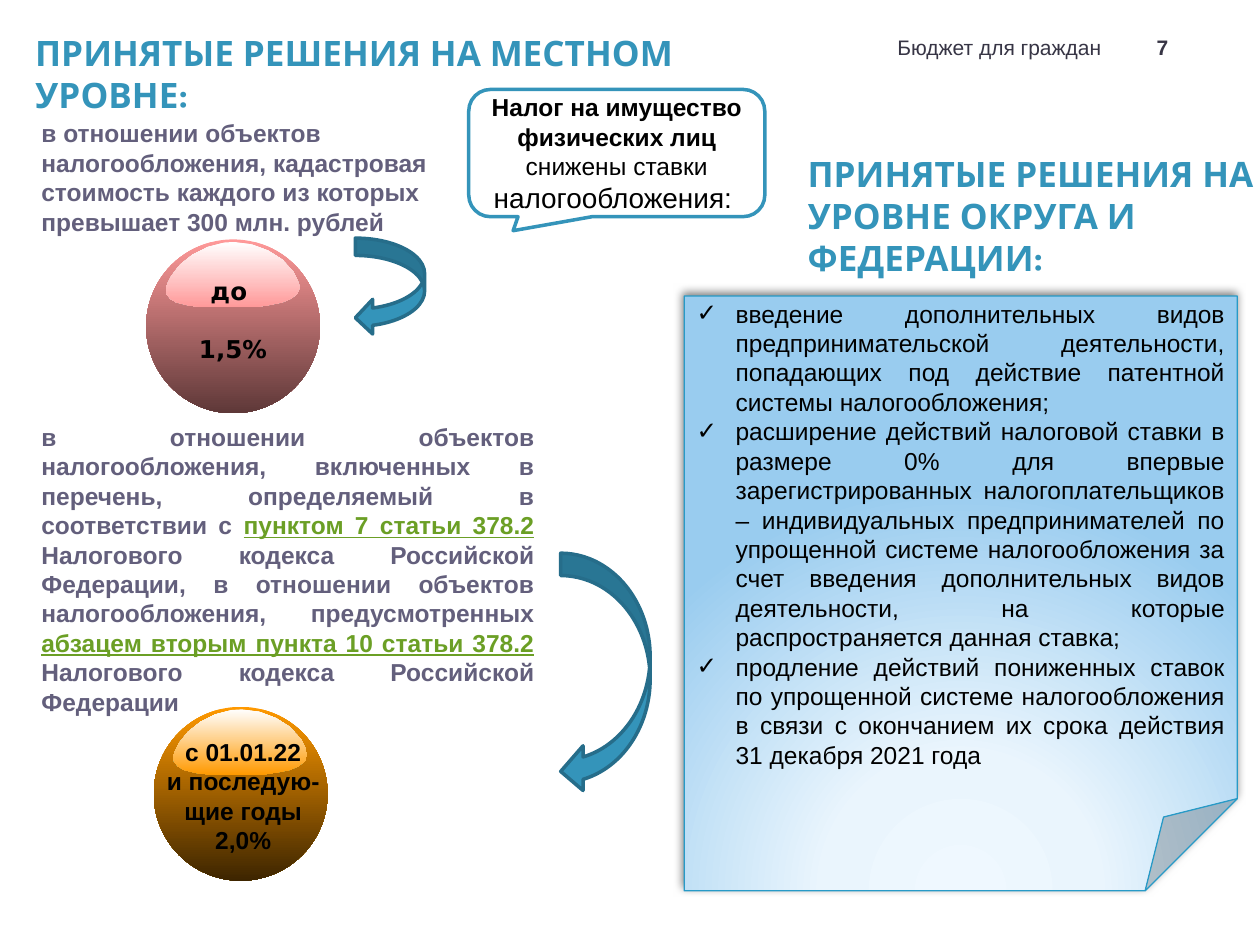
from typing import NamedTuple, Optional

from lxml.etree import SubElement
from pptx import Presentation
from pptx.dml.color import RGBColor
from pptx.enum.shapes import MSO_SHAPE as Shape
from pptx.enum.text import MSO_ANCHOR as Anchor, PP_ALIGN as Align
from pptx.oxml import parse_xml
from pptx.oxml.ns import nsdecls, qn
from pptx.util import Inches, Pt

# Grid: 100 columns by 75 rows over a 10 x 7.5 inch slide
COLUMNS, ROWS = 100, 75
WIDTH, HEIGHT = Inches(10), Inches(7.5)

BLACK = RGBColor(0x00, 0x00, 0x00)
WHITE = RGBColor(0xFF, 0xFF, 0xFF)
INK = RGBColor(0x37, 0x35, 0x45)
MUTED = RGBColor(0x63, 0x5F, 0x7C)
LINK = RGBColor(0x6B, 0x9F, 0x25)
TEAL = RGBColor(0x34, 0x94, 0xBA)
DARK_TEAL = RGBColor(0x26, 0x6D, 0x8A)
SHEET_EDGE = RGBColor(0x27, 0x9A, 0xC7)
PINK = RGBColor(0xFF, 0x99, 0x99)
DARK_PINK = RGBColor(0x5E, 0x38, 0x38)
ORANGE = RGBColor(0xFF, 0x99, 0x00)
DARK_ORANGE = RGBColor(0x3D, 0x25, 0x00)


class Box(NamedTuple):
    column: float
    row: float
    columns: float
    rows: float

    def emu(self) -> list[int]:
        return [round(self.column / COLUMNS * WIDTH), round(self.row / ROWS * HEIGHT),
                round(self.columns / COLUMNS * WIDTH), round(self.rows / ROWS * HEIGHT)]


class Style(NamedTuple):
    size: float
    color: RGBColor
    bold: bool = True
    font: str = "Arial"
    underline: bool = False


class Label(NamedTuple):
    box: Box
    paragraphs: list  # each paragraph is a list of (text, style)
    align: Align = Align.LEFT
    anchor: Anchor = Anchor.TOP
    side_inset: float = 0.1
    gap: float = 0
    wrap: bool = True


class Ball(NamedTuple):
    box: Box
    light: RGBColor
    dark: RGBColor


# Glossy highlight: columns and rows from the corner of its ball
GLOSS = [(12, 3.2), (12.2, 3.8), (12, 4.3), (11.5, 4.7), (10.8, 5), (9.8, 5.2), (8.8, 5.35),
         (7.9, 5.4), (5.4, 5.4), (4.3, 5.35), (3.4, 5.25), (2.4, 5), (1.9, 4.7), (1.6, 4.3),
         (1.55, 3.9), (1.7, 3.5), (2, 2.9), (2.7, 2), (3.7, 1.2), (4.9, 0.6), (6.2, 0.25),
         (7, 0.2), (8.4, 0.4), (9.7, 0.9), (10.8, 1.6), (11.7, 2.6)]


def write(frame, paragraphs: list, align: Align, gap: float = 0) -> None:
    for index, pieces in enumerate(paragraphs):
        paragraph = frame.add_paragraph() if index else frame.paragraphs[0]
        paragraph.alignment = align
        if index and gap:
            paragraph.space_before = Pt(gap)
        for text, style in pieces:
            run = paragraph.add_run()
            run.text = text
            font = run.font
            font.size, font.name, font.bold = Pt(style.size), style.font, style.bold
            font.color.rgb = style.color
            if style.underline:
                font.underline = True


def add_label(shapes, label: Label) -> None:
    frame = shapes.add_textbox(*label.box.emu()).text_frame
    frame.word_wrap = label.wrap
    frame.vertical_anchor = label.anchor
    frame.margin_left = frame.margin_right = Inches(label.side_inset)
    write(frame, label.paragraphs, label.align, label.gap)


def shade(shape, top: RGBColor, bottom: RGBColor) -> None:
    shape.shadow.inherit = False
    shape.line.fill.background()
    shape.fill.gradient()
    shape.fill.gradient_angle = 270
    for stop, color in zip(shape.fill.gradient_stops, (top, bottom)):
        stop.color.rgb = color


def add_ball(shapes, ball: Ball) -> None:
    shade(shapes.add_shape(Shape.OVAL, *ball.box.emu()), ball.light, ball.dark)
    points = [Box(ball.box.column + x, ball.box.row + y, 0, 0).emu()[:2] for x, y in GLOSS]
    outline = shapes.build_freeform(*points[0])
    outline.add_line_segments(points[1:], close=True)
    shade(outline.convert_to_shape(), WHITE, ball.light)


def add_outlined(shapes, kind: Shape, box: Box, fill: RGBColor, line: RGBColor, width: float):
    shape = shapes.add_shape(kind, *box.emu())
    shape.shadow.inherit = False
    shape.fill.solid()
    shape.fill.fore_color.rgb = fill
    shape.line.color.rgb = line
    shape.line.width = Pt(width)
    return shape


def add_sheet(shapes, box: Box, items: list, style: Style) -> None:
    sheet = add_outlined(shapes, Shape.FOLDED_CORNER, box, WHITE, SHEET_EDGE, 0.75)
    properties = sheet.fill._xPr
    # Radial glow rising from the bottom edge
    stops = "".join(f'<a:gs pos="{share * 1000}"><a:srgbClr val="{color}"/></a:gs>'
                    for share, color in ((0, "EFF8FF"), (34, "EAF5FD"), (100, "99CCEF")))
    glow = parse_xml(f'<a:gradFill {nsdecls("a")} rotWithShape="1"><a:gsLst>{stops}</a:gsLst>'
                     '<a:path path="circle"><a:fillToRect l="110000" t="250000" r="110000" '
                     'b="40000"/></a:path></a:gradFill>')
    properties.replace(properties.find(qn("a:solidFill")), glow)
    # Soft shadow
    shadow = SubElement(properties.find(qn("a:effectLst")), qn("a:outerShdw"),
                        blurRad=str(Pt(5)), dist=str(Pt(2)), dir=str(245 * 60000),
                        algn="tl", rotWithShape="0")
    tint = SubElement(shadow, qn("a:srgbClr"), val="000000")
    SubElement(tint, qn("a:alpha"), val="50000")
    # Check-marked list
    frame = sheet.text_frame
    frame.word_wrap = True
    frame.vertical_anchor = Anchor.TOP
    frame.margin_top = Inches(0.02)
    write(frame, [[(item, style)] for item in items], Align.JUSTIFY)
    for paragraph in frame.paragraphs:
        layout = paragraph._p.get_or_add_pPr()
        layout.set("marL", str(Inches(0.31)))
        layout.set("indent", str(-Inches(0.31)))
        SubElement(layout, qn("a:buFont"), typeface="Arial")
        SubElement(layout, qn("a:buChar"), char="✓")


HEADER = Style(12, INK, False)
PAGE = Style(12, INK)
HEADING = Style(20, TEAL, font="Karla")
CONDITION = Style(14, MUTED)
REFERENCE = Style(14, LINK, underline=True)
STRONG = Style(14, BLACK)
PLAIN = Style(14, BLACK, False)
LARGE = Style(16, BLACK, False)
RATE = Style(14, BLACK, font="DejaVu Sans")

LABELS = [
    Label(Box(64.2, 1.9, 24.2, 3.3), [[("Бюджет для граждан", HEADER)]],
          Align.RIGHT, Anchor.BOTTOM),
    Label(Box(89.5, 1.9, 5.5, 3.3), [[("7", PAGE)]], Align.CENTER, Anchor.BOTTOM),
    Label(Box(2.8, 2, 50.7, 11.4), [[("ПРИНЯТЫЕ РЕШЕНИЯ НА МЕСТНОМ УРОВНЕ:", HEADING)]],
          side_inset=0),
    Label(Box(64.1, 11.4, 35.9, 11.4),
          [[("ПРИНЯТЫЕ РЕШЕНИЯ НА", HEADING)], [("УРОВНЕ ОКРУГА И ФЕДЕРАЦИИ:", HEADING)]],
          anchor=Anchor.MIDDLE, side_inset=0),
    Label(Box(2.3, 8.9, 39.9, 10.4),
          [[("в отношении объектов налогообложения, кадастровая стоимость каждого "
             "из которых превышает 300 млн. рублей", CONDITION)]]),
    Label(Box(2.3, 33, 41.1, 24.6),
          [[("в отношении объектов налогообложения, включенных в перечень, определяемый "
             "в соответствии с ", CONDITION),
            ("пунктом 7 статьи 378.2", REFERENCE),
            (" Налогового кодекса Российской Федерации, в отношении объектов "
             "налогообложения, предусмотренных ", CONDITION),
            ("абзацем вторым пункта 10 статьи 378.2", REFERENCE),
            (" Налогового кодекса Российской Федерации", CONDITION)]], Align.JUSTIFY),
    Label(Box(13.2, 21.3, 10.6, 8.1), [[("до ", RATE)], [("1,5%", RATE)]],
          Align.CENTER, Anchor.MIDDLE, gap=16.5),
    Label(Box(12.2, 58, 14.2, 10.4),
          [[(line, STRONG)] for line in ("с 01.01.22", "и последую-", "щие годы", "2,0%")],
          Align.CENTER, wrap=False),
]
BALLS = [Ball(Box(11.6, 19, 13.8, 13.8), PINK, DARK_PINK),
         Ball(Box(12.2, 56.1, 13.8, 13.8), ORANGE, DARK_ORANGE)]
ARROWS = [Box(28.2, 18.9, 5.5, 7.7), Box(44.5, 43.9, 7.1, 19.1)]
MEASURES = [
    "введение дополнительных видов предпринимательской деятельности, попадающих под "
    "действие патентной системы налогообложения;",
    "расширение действий налоговой ставки в размере 0% для впервые зарегистрированных "
    "налогоплательщиков – индивидуальных предпринимателей по упрощенной системе "
    "налогообложения за счет введения дополнительных видов деятельности, на которые "
    "распространяется данная ставка;",
    "продление действий пониженных ставок по упрощенной системе налогообложения в связи "
    "с окончанием их срока действия 31 декабря 2021 года",
]


def add_callout(shapes, box: Box, pieces: list, adjustments: Optional[tuple] = None) -> None:
    callout = add_outlined(shapes, Shape.ROUNDED_RECTANGULAR_CALLOUT, box, WHITE, TEAL, 2)
    for index, value in enumerate(adjustments or ()):
        callout.adjustments[index] = value
    callout.text_frame.word_wrap = True
    callout.text_frame.vertical_anchor = Anchor.MIDDLE
    write(callout.text_frame, [pieces], Align.CENTER)


def main() -> None:
    deck = Presentation()
    deck.slide_width, deck.slide_height = WIDTH, HEIGHT
    shapes = deck.slides.add_slide(deck.slide_layouts[6]).shapes
    for ball in BALLS:
        add_ball(shapes, ball)
    add_callout(shapes, Box(37.2, 7.1, 23.5, 10.1),
                [("Налог на имущество физических лиц ", STRONG), ("снижены ставки ", PLAIN),
                 ("налогообложения: ", LARGE)], (-0.35, 0.61, 0.17))
    for arrow in ARROWS:
        add_outlined(shapes, Shape.CURVED_LEFT_ARROW, arrow, TEAL, DARK_TEAL, 2)
    add_sheet(shapes, Box(54.3, 23.5, 43.9, 47.2), MEASURES, PLAIN)
    for label in LABELS:
        add_label(shapes, label)
    deck.save("out.pptx")


if __name__ == "__main__":
    main()
